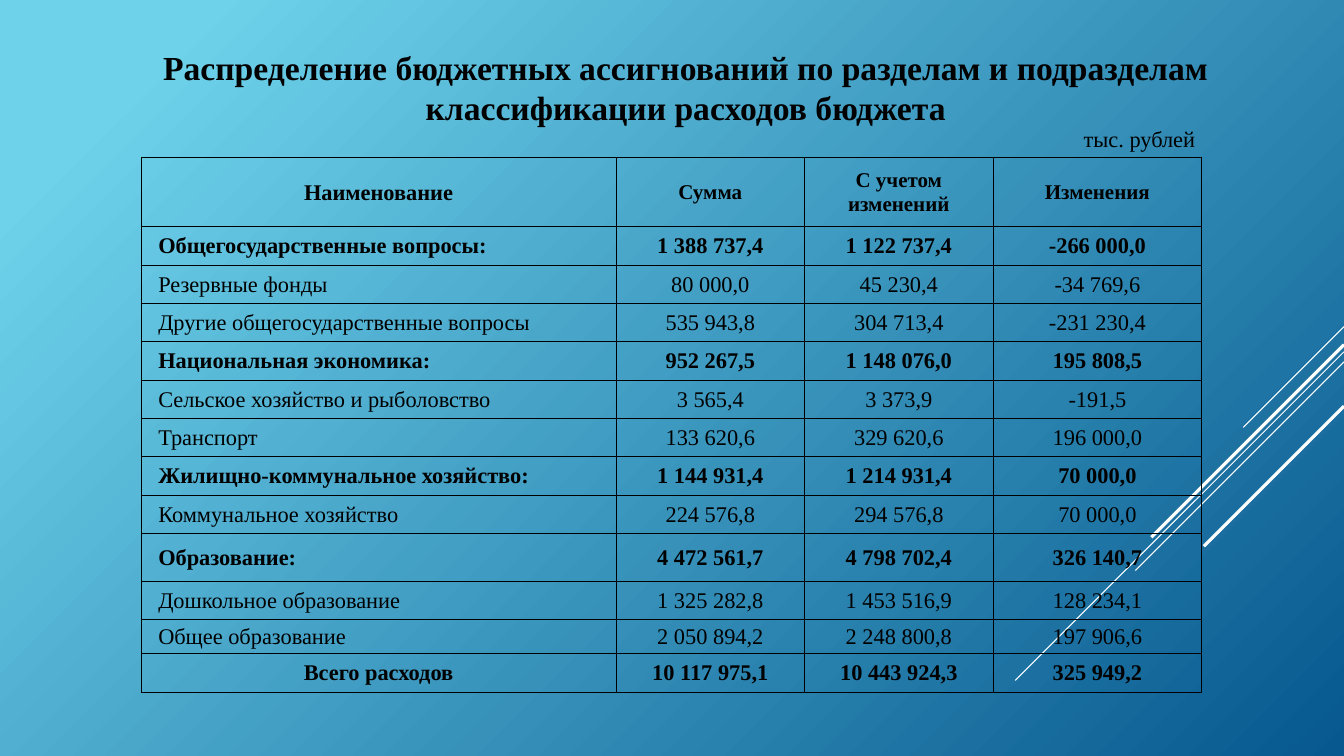
from lxml.etree import SubElement
from pptx import Presentation
from pptx.dml.color import RGBColor
from pptx.enum.shapes import MSO_CONNECTOR
from pptx.enum.text import MSO_ANCHOR as ANCHOR, MSO_AUTO_SIZE as AUTO, PP_ALIGN as AL
from pptx.oxml import parse_xml
from pptx.oxml.ns import nsdecls, qn
from pptx.util import Pt

PX = 9144
W, H = 1333, 750
FONT = "Times New Roman"
COLORS = {"sky": "6ED2EB", "deep": "06588E", "ray": "FFFFFF", "ink": "000000"}

RAYS = [(324, 1233, 0.75), (349, 1007, 0.75), (359, 1126, 0.75),
        (342, 1142, 2.25), (403, 1194, 2.25)]
COLS = [471, 187, 187, 207]
ROW_HEIGHTS = [69] + [38] * 8 + [48, 38, 33, 39]
HEADER = ("Наименование", "Сумма", "С учетом изменений", "Изменения")
SECTIONS = [
    ("Общегосударственные вопросы:", "1 388 737,4", "1 122 737,4", "-266 000,0"),
    ("Резервные фонды", "80 000,0", "45 230,4", "-34 769,6"),
    ("Другие общегосударственные вопросы", "535 943,8", "304 713,4", "-231 230,4"),
    ("Национальная экономика:", "952 267,5", "1 148 076,0", "195 808,5"),
    ("Сельское хозяйство и рыболовство", "3 565,4", "3 373,9", "-191,5"),
    ("Транспорт", "133 620,6", "329 620,6", "196 000,0"),
    ("Жилищно-коммунальное хозяйство:", "1 144 931,4", "1 214 931,4", "70 000,0"),
    ("Коммунальное хозяйство", "224 576,8", "294 576,8", "70 000,0"),
    ("Образование:", "4 472 561,7", "4 798 702,4", "326 140,7"),
    ("Дошкольное образование", "1 325 282,8", "1 453 516,9", "128 234,1"),
    ("Общее образование", "2 050 894,2", "2 248 800,8", "197 906,6"),
]
TOTAL = ("Всего расходов", "10 117 975,1", "10 443 924,3", "325 949,2")


def rgb(name):
    return RGBColor.from_string(COLORS[name])


class BudgetSlide:
    def __init__(self, prs):
        self.slide = prs.slides.add_slide(prs.slide_layouts[5])
        self.shapes = self.slide.shapes

    def background(self):
        fill = self.slide.background.fill
        fill.gradient()
        fill.gradient_angle = 315
        for stop, pos, name in zip(fill.gradient_stops, (0.1, 1), ("sky", "deep")):
            stop.position = pos
            stop.color.rgb = rgb(name)

    def add_text(self, tf, text, size, bold=False, align=AL.LEFT):
        p = tf.paragraphs[0]
        p.alignment = align
        r = p.add_run()
        r.text = text
        r.font.name = FONT
        r.font.size = Pt(size)
        r.font.bold = bold
        r.font.color.rgb = rgb("ink")

    def title(self, text, x, y, w, h):
        sp = self.shapes.title
        sp.left, sp.top, sp.width, sp.height = (v * PX for v in (x, y, w, h))
        tf = sp.text_frame
        tf.word_wrap = True
        tf.auto_size = AUTO.NONE
        tf.vertical_anchor = ANCHOR.MIDDLE
        self.add_text(tf, text, 24, True, AL.CENTER)

    def label(self, text, x, y, w, h):
        tf = self.shapes.add_textbox(x * PX, y * PX, w * PX, h * PX).text_frame
        tf.word_wrap = True
        self.add_text(tf, text, 16)

    def ray(self, y, end_x, width):
        cn = self.shapes.add_connector(MSO_CONNECTOR.STRAIGHT, W * PX, y * PX,
                                       end_x * PX, (y + W - end_x) * PX)
        cn.line.color.rgb = rgb("ray")
        cn.line.width = Pt(width)
        SubElement(cn._element.spPr, qn("a:effectLst"))

    def borders(self, cell):
        tcPr = cell._tc.get_or_add_tcPr()
        for i, side in enumerate("LRTB"):
            tcPr.insert(i, parse_xml(
                f'<a:ln{side} {nsdecls("a")} w="{Pt(0.5)}"><a:solidFill>'
                f'<a:srgbClr val="{COLORS["ink"]}"/></a:solidFill></a:ln{side}>'))

    def cell(self, cell, text, size, bold, indented):
        cell.fill.background()
        self.borders(cell)
        cell.vertical_anchor = ANCHOR.MIDDLE
        cell.margin_left = (17 if indented else 1) * PX
        cell.margin_right = cell.margin_top = PX
        cell.margin_bottom = 0
        self.add_text(cell.text_frame, text, size, bold, AL.LEFT if indented else AL.CENTER)

    def table(self, x, y):
        rows = [HEADER, *SECTIONS, TOTAL]
        table = self.shapes.add_table(len(rows), len(COLS), x * PX, y * PX,
                                      sum(COLS) * PX, sum(ROW_HEIGHTS) * PX).table
        table.first_row = table.horz_banding = False
        for col, w in zip(table.columns, COLS):
            col.width = w * PX
        for i, values in enumerate(rows):
            table.rows[i].height = ROW_HEIGHTS[i] * PX
            outer = values in (HEADER, TOTAL)
            bold = outer or values[0].endswith(":")
            for j, text in enumerate(values):
                size = 15 if i == 0 and j > 0 else 16
                self.cell(table.cell(i, j), text, size, bold, j == 0 and not outer)


def main():
    prs = Presentation()
    prs.slide_width, prs.slide_height = W * PX, H * PX
    s = BudgetSlide(prs)
    s.background()
    for ray in RAYS:
        s.ray(*ray)
    s.table(140, 156)
    s.title("Распределение бюджетных ассигнований по разделам и подразделам "
            "классификации расходов бюджета", 149, 41, 1062, 91)
    s.label("тыс. рублей", 1065, 119, 165, 37)
    prs.save("out.pptx")


if __name__ == "__main__":
    main()
